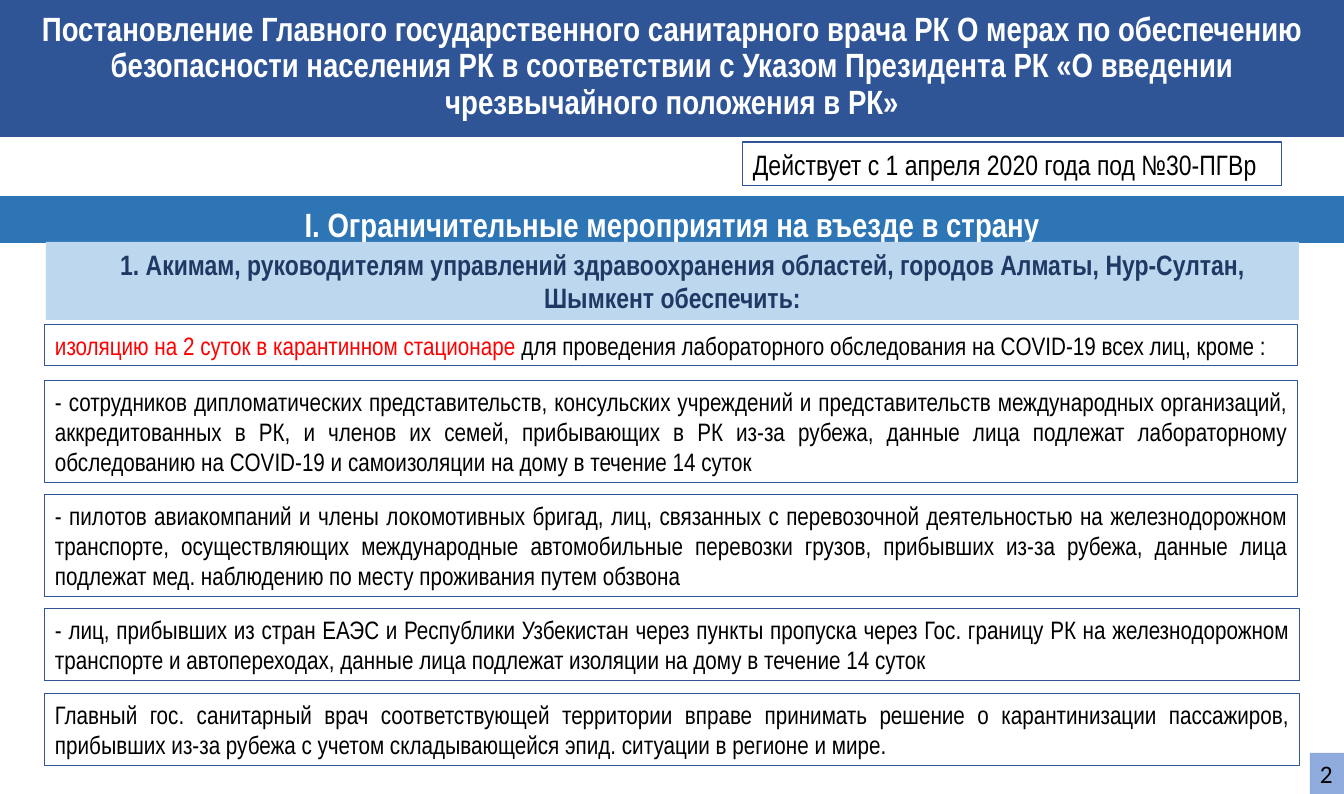
"""Build the slide on quarantine measures for people entering the country."""
from pptx import Presentation
from pptx.dml.color import RGBColor
from pptx.enum.shapes import MSO_SHAPE as Shape
from pptx.enum.text import MSO_ANCHOR as Anchor, MSO_AUTO_SIZE as Fit, PP_ALIGN as Align
from pptx.util import Pt

PX = 12192000 / 1344
WIDE, HIGH = 1344, 794
NARROW = "Arial Narrow"
HEX = {
    "navy": "2F5597", "blue": "2E75B6", "pale": "BDD7EE", "tag": "8FAADC",
    "ink": "203864", "white": "FFFFFF", "black": "000000", "red": "FF0000",
}

HEAD = ("Постановление Главного государственного санитарного врача РК О мерах по обеспечению "
        "безопасности населения РК в соответствии с Указом Президента РК "
        "«О введении чрезвычайного положения в РК»")
DATE = "Действует с 1 апреля 2020 года под №30-ПГВр"
TITLE = "І. Ограничительные мероприятия на въезде в страну"
LEAD = ("1. Акимам, руководителям управлений здравоохранения областей, "
        "городов Алматы, Нур-Султан, Шымкент обеспечить:")
RULES = [
    ((45, 325, 1253, 41), [
        ("изоляцию на 2 суток в карантинном стационаре ", "red"),
        ("для проведения лабораторного обследования на COVID-19 всех лиц, кроме :", "black")]),
    ((45, 381, 1253, 102), [
        ("- сотрудников дипломатических представительств, консульских учреждений и "
         "представительств международных организаций, аккредитованных в РК, и членов их семей, "
         "прибывающих в РК из-за рубежа, данные лица подлежат лабораторному обследованию "
         "на COVID-19 и самоизоляции на дому в течение 14 суток", "black")]),
    ((45, 495, 1253, 102), [
        ("- пилотов авиакомпаний и члены локомотивных бригад, лиц, связанных с перевозочной "
         "деятельностью на железнодорожном транспорте, осуществляющих международные "
         "автомобильные перевозки грузов, прибывших из-за рубежа, данные лица подлежат "
         "мед. наблюдению по месту проживания путем обзвона", "black")]),
    ((45, 609, 1255, 72), [
        ("- лиц, прибывших из стран ЕАЭС и Республики Узбекистан через пункты пропуска через "
         "Гос. границу РК на железнодорожном транспорте и автопереходах, данные лица подлежат "
         "изоляции на дому в течение 14 суток", "black")]),
    ((45, 694, 1255, 72), [
        ("Главный гос. санитарный врач соответствующей территории вправе принимать решение "
         "о карантинизации пассажиров, прибывших из-за рубежа с учетом складывающейся эпид. "
         "ситуации в регионе и мире.", "black")]),
]


def px(n):
    return round(n * PX)


def rgb(name):
    return RGBColor.from_string(HEX[name])


def place(shape, box, fill=None, line=None):
    shape.left, shape.top, shape.width, shape.height = map(px, box)
    if fill:
        shape.fill.solid()
        shape.fill.fore_color.rgb = rgb(fill)
    else:
        shape.fill.background()
    if line:
        shape.line.color.rgb = rgb(line)
        shape.line.width = Pt(0.75)
    else:
        shape.line.fill.background()


def write(shape, runs, size, align=Align.LEFT, bold=False, font=NARROW,
          anchor=Anchor.TOP, wrap=True, pad=(5, 5), space=1.0, indent=0):
    frame = shape.text_frame
    frame.word_wrap = wrap
    frame.auto_size = Fit.NONE
    frame.vertical_anchor = anchor
    frame.margin_left = frame.margin_right = px(10)
    frame.margin_top, frame.margin_bottom = map(px, pad)
    para = frame.paragraphs[0]
    para.alignment = align
    para.line_spacing = space
    if indent:
        para._p.get_or_add_pPr().set("indent", str(px(indent)))
    for text, color in runs:
        run = para.add_run()
        run.text = text
        run.font.name = font
        run.font.size = Pt(size)
        run.font.bold = bold
        run.font.color.rgb = rgb(color)


def main():
    deck = Presentation()
    deck.slide_width, deck.slide_height = px(WIDE), px(HIGH)
    slide = deck.slides.add_slide(deck.slide_layouts[5])

    def block(box, fill=None, line=None):
        shape = slide.shapes.add_shape(Shape.RECTANGLE, *map(px, box))
        shape.shadow.inherit = False
        place(shape, box, fill, line)
        return shape

    title = slide.shapes.title
    place(title, (0, 196, WIDE, 47), "blue")
    write(title, [(TITLE, "white")], 24, Align.CENTER, True,
          anchor=Anchor.MIDDLE, pad=(9, 0))

    lead = block((46, 242, 1253, 78), "pale")
    write(lead, [(LEAD, "ink")], 20, Align.CENTER, True, indent=20)

    for box, runs in RULES:
        write(block(box, line="navy"), runs, 18, Align.JUSTIFY)

    head = block((0, 0, WIDE, 137), "navy")
    write(head, [(HEAD, "white")], 24, Align.CENTER, True,
          anchor=Anchor.MIDDLE, pad=(5, 8), space=0.9)

    date = block((743, 142, 539, 44), line="navy")
    write(date, [(DATE, "black")], 20, wrap=False)

    page = block((1310, 753, 34, 41), "tag")
    write(page, [("2", "black")], 18, font="Calibri", wrap=False)

    deck.save("out.pptx")


if __name__ == "__main__":
    main()
